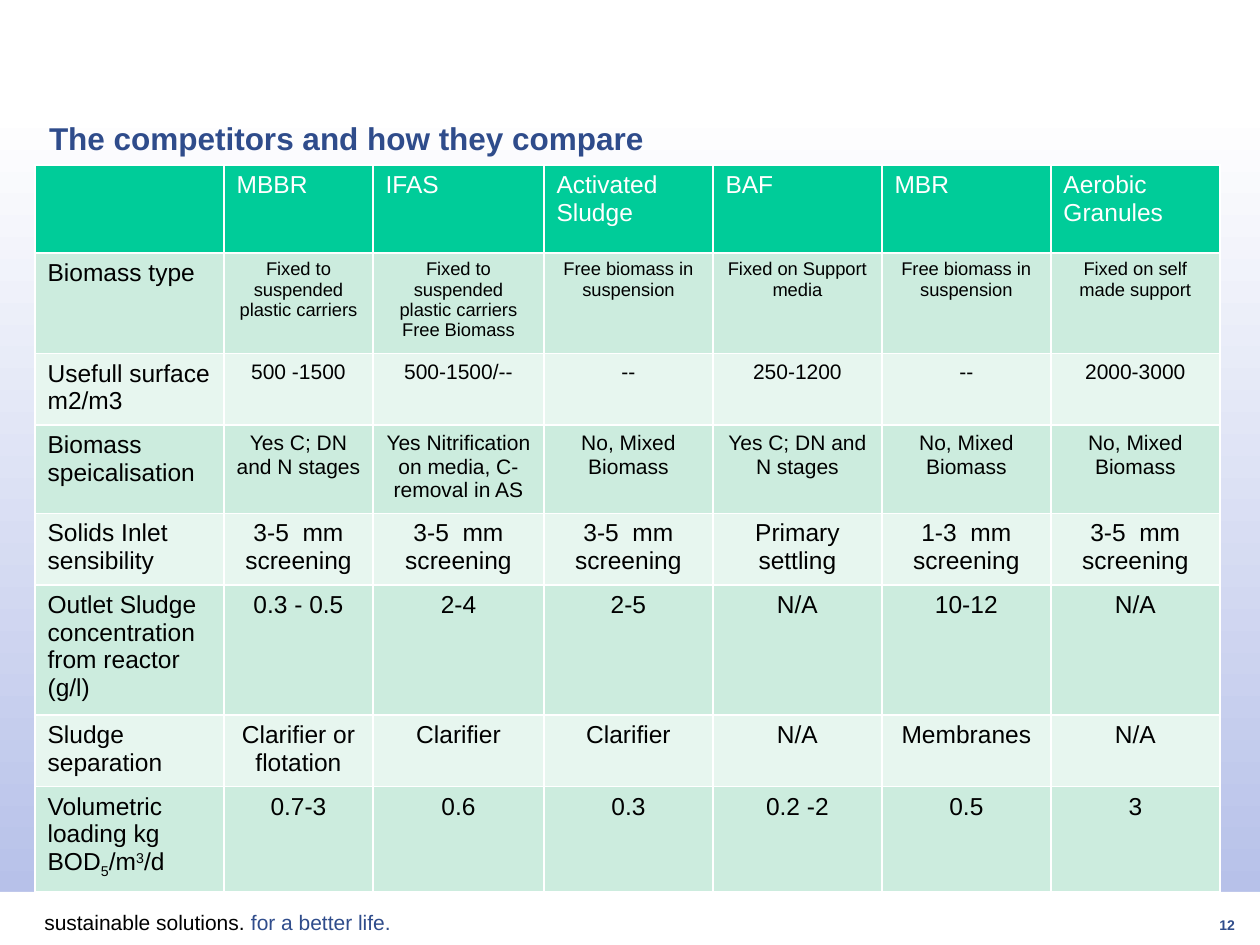
import pptx
import pptx.util
import pptx.dml.color
import pptx.enum.text
import pptx.enum.shapes
import pptx.oxml
import pptx.oxml.ns

RGB = pptx.dml.color.RGBColor
WHITE = RGB(0xFF, 0xFF, 0xFF)
BLACK = RGB(0, 0, 0)
BLUE = RGB(0x2F, 0x4C, 0x8B)
HAZE = RGB(0xB7, 0xC1, 0xE9)
GREEN = RGB(0x00, 0xCC, 0x99)
MINT = RGB(0xCC, 0xEC, 0xDE)
PALE = RGB(0xE7, 0xF6, 0xEF)
SCALE = 914400 / 126
ALIGN = pptx.enum.text.PP_ALIGN
ANCHOR = pptx.enum.text.MSO_ANCHOR


def px(*sizes):
    return [round(size * SCALE) for size in sizes]


def style(run, size, color, bold=False):
    run.font.name = "Arial"
    run.font.size = pptx.util.Pt(size)
    run.font.bold = bold
    run.font.color.rgb = color


deck = pptx.Presentation()
deck.slide_width, deck.slide_height = px(1260, 945)
slide = deck.slides.add_slide(deck.slide_layouts[5])
shapes = slide.shapes

bands = []
for top, high in [(106, 787), (892, 53)]:
    band = shapes.add_shape(pptx.enum.shapes.MSO_SHAPE.RECTANGLE, *px(0, top, 1260, high))
    band.shadow.inherit = False
    band.line.fill.background()
    bands.append(band)
bands[0].fill.gradient()
bands[0].fill.gradient_angle = 270
for stop, color, place in zip(bands[0].fill.gradient_stops, (WHITE, HAZE), (0, 1)):
    stop.color.rgb = color
    stop.position = place
bands[1].fill.solid()
bands[1].fill.fore_color.rgb = WHITE

page = shapes.add_textbox(*px(1166, 906, 94, 32)).text_frame
page.text = "12"
page.vertical_anchor = ANCHOR.BOTTOM
page.margin_left, page.margin_top, page.margin_right, page.margin_bottom = px(5, 5, 25, 5)
page.paragraphs[0].alignment = ALIGN.RIGHT
style(page.paragraphs[0].runs[0], 8, BLUE, True)

motto = shapes.add_textbox(*px(32, 903, 577, 38)).text_frame
motto.word_wrap = True
for text, color in [("sustainable solutions. ", BLACK), ("for a better life.", BLUE)]:
    run = motto.paragraphs[0].add_run()
    run.text = text
    style(run, 12, color)

title = shapes.title
title.left, title.top, title.width, title.height = px(49, 106, 1186, 89)
frame = title.text_frame
frame.text = "The competitors and how they compare"
frame.word_wrap = True
frame.auto_size = pptx.enum.text.MSO_AUTO_SIZE.NONE
frame.vertical_anchor = ANCHOR.TOP
frame.margin_left, frame.margin_top, frame.margin_right, frame.margin_bottom = px(0, 13, 0, 0)
frame.paragraphs[0].alignment = ALIGN.LEFT
style(frame.paragraphs[0].runs[0], 18, BLUE, True)
bands[1]._element.addnext(title._element)

FREE = "Free biomass in suspension"
MIXED = "No, Mixed Biomass"
STAGES = "Yes C; DN and N stages"
FIXED = "Fixed to suspended plastic carriers"
COARSE = "3-5  mm\nscreening"
rows = [
    (88, 14, ["", "MBBR", "IFAS", "Activated Sludge", "BAF", "MBR", "Aerobic Granules"]),
    (94, 10.5, ["Biomass type", FIXED, FIXED + "\nFree Biomass", FREE,
                "Fixed on Support media", FREE, "Fixed on self made support"]),
    (68, 12, ["Usefull surface\nm2/m3", "500 -1500", "500-1500/--", "--",
              "250-1200", "--", "2000-3000"]),
    (83, 12, ["Biomass speicalisation", STAGES, "Yes Nitrification on media, C- removal in AS",
              MIXED, STAGES, MIXED, MIXED]),
    (68, 14, ["Solids Inlet sensibility", COARSE, COARSE, COARSE, "Primary settling",
              "1-3  mm\nscreening", COARSE]),
    (122, 14, ["Outlet Sludge concentration from reactor (g/l)", "0.3 - 0.5", "2-4", "2-5",
               "N/A", "10-12", "N/A"]),
    (68, 14, ["Sludge separation", "Clarifier or flotation", "Clarifier", "Clarifier",
              "N/A", "Membranes", "N/A"]),
    (100, 14, ["Volumetric loading kg BOD", "0.7-3", "0.6", "0.3", "0.2 -2", "0.5", "3"]),
]
wide = [189, 149, 171, 169, 169, 169, 169]
high = sum(row[0] for row in rows)
grid = shapes.add_table(len(rows), len(wide), *px(35, 165, sum(wide), high)).table
for col, size in zip(grid.columns, wide):
    col.width = px(size)[0]

for r, (high, size, texts) in enumerate(rows):
    grid.rows[r].height = px(high)[0]
    for c, text in enumerate(texts):
        cell = grid.cell(r, c)
        cell.text = text
        if r == len(rows) - 1 and c == 0:
            for part, base in [("5", -25), ("/m", 0), ("3", 30), ("/d", 0)]:
                run = cell.text_frame.paragraphs[0].add_run()
                run.text = part
                run._r.get_or_add_rPr().set("baseline", str(base * 1000))
        for para in cell.text_frame.paragraphs:
            para.alignment = ALIGN.CENTER if r and c else ALIGN.LEFT
            for run in para.runs:
                style(run, size if c else 14, BLACK if r else WHITE)
        props = cell._tc.get_or_add_tcPr()
        for side in "LRTB":
            props.append(pptx.oxml.parse_xml(
                f'<a:ln{side} {pptx.oxml.ns.nsdecls("a")} w="12700"><a:solidFill>'
                f'<a:srgbClr val="{WHITE}"/></a:solidFill></a:ln{side}>'))
        cell.fill.solid()
        cell.fill.fore_color.rgb = (MINT if r % 2 else PALE) if r else GREEN

deck.save("out.pptx")
